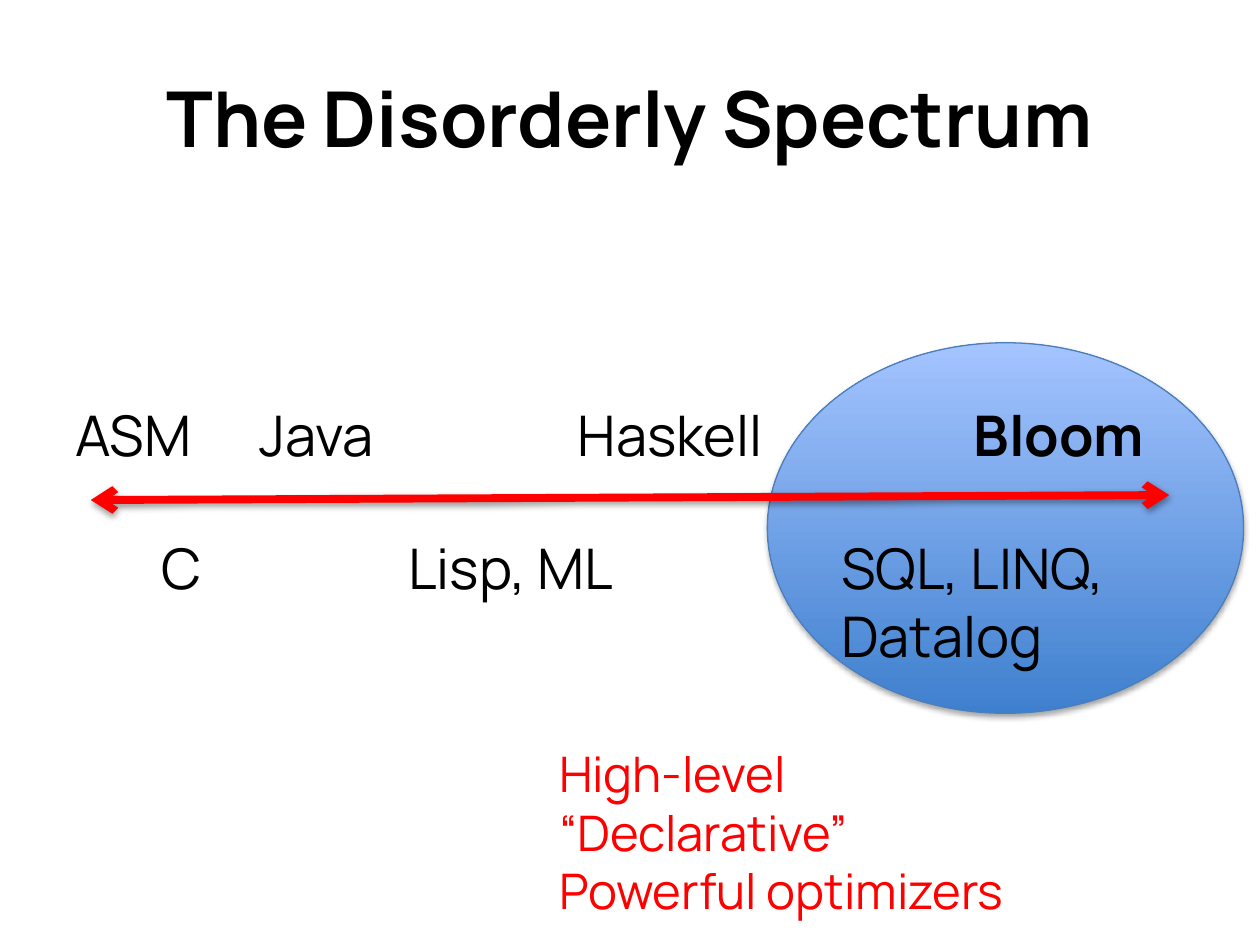
from lxml.etree import SubElement
from pptx import Presentation
from pptx.dml.color import RGBColor
from pptx.enum.shapes import MSO_CONNECTOR as Link, MSO_SHAPE as Form
from pptx.enum.text import MSO_ANCHOR as Anchor, MSO_AUTO_SIZE as Fit, PP_ALIGN as Align
from pptx.oxml.ns import qn
from pptx.util import Cm, Pt

BLACK = RGBColor(0x00, 0x00, 0x00)
RED = RGBColor(0xFF, 0x00, 0x00)
DEEP = RGBColor(0x3F, 0x80, 0xCE)
PALE = RGBColor(0xA4, 0xC4, 0xFF)
EDGE = RGBColor(0x4B, 0x7E, 0xBC)

ABOVE, BELOW = 7.95, 10.64
TALL, DOUBLE = 1.63, 3
LABELS = [
    ("ASM", 1.27, ABOVE, 2.97, TALL, False),
    ("C", 3, BELOW, 1.3, TALL, False),
    ("Java", 4.98, ABOVE, 2.87, TALL, False),
    ("Lisp, ML", 7.98, BELOW, 4.9, TALL, False),
    ("Haskell", 11.4, ABOVE, 4.42, TALL, False),
    ("SQL, LINQ,\vDatalog", 16.71, BELOW, 6.2, DOUBLE, False),
    ("Bloom", 19.38, ABOVE, 4.09, TALL, True),
]


class Board:
    font = "Manrope"

    def __init__(self, slide):
        self.slide = slide

    def shade(self, shape, alpha, dist):
        props = shape._element.spPr
        for old in props.findall(qn("a:effectLst")):
            props.remove(old)
        effects = SubElement(props, qn("a:effectLst"))
        shadow = SubElement(effects, qn("a:outerShdw"), blurRad=str(Pt(3.1)),
                            dist=str(Pt(dist)), dir="5400000", rotWithShape="0")
        color = SubElement(shadow, qn("a:srgbClr"), val=str(BLACK))
        SubElement(color, qn("a:alpha"), val=str(alpha * 1000))

    def oval(self, x, y, w, h):
        shape = self.slide.shapes.add_shape(Form.OVAL, Cm(x), Cm(y), Cm(w), Cm(h))
        shape.fill.gradient()
        shape.fill.gradient_angle = 90
        for stop, color in zip(shape.fill.gradient_stops, (DEEP, PALE)):
            stop.color.rgb = color
        shape.line.color.rgb = EDGE
        shape.line.width = Pt(0.75)
        self.shade(shape, 35, 1.8)

    def arrow(self, x1, y1, x2, y2):
        link = self.slide.shapes.add_connector(
            Link.STRAIGHT, Cm(x1), Cm(y1), Cm(x2), Cm(y2))
        link.line.color.rgb = RED
        link.line.width = Pt(4.5)
        for end in ("a:headEnd", "a:tailEnd"):
            SubElement(link.line._get_or_add_ln(), qn(end), type="arrow")
        self.shade(link, 38, 1.6)

    def text(self, words, x, y, w, h, size=32, color=BLACK, bold=False):
        frame = self.slide.shapes.add_textbox(Cm(x), Cm(y), Cm(w), Cm(h)).text_frame
        frame.word_wrap = False
        frame.auto_size = Fit.SHAPE_TO_FIT_TEXT
        frame.text = words
        for para in frame.paragraphs:
            para.font.name = self.font
            para.font.size = Pt(size)
            para.font.bold = bold
            para.font.color.rgb = color
        return frame

    def title(self, words, x, y, w, h):
        frame = self.text(words, x, y, w, h, size=44, bold=True)
        frame.word_wrap = True
        frame.auto_size = Fit.NONE
        frame.vertical_anchor = Anchor.MIDDLE
        frame.paragraphs[0].alignment = Align.CENTER


def main():
    deck = Presentation()
    deck.slide_width, deck.slide_height = Cm(25.4), Cm(19.05)
    board = Board(deck.slides.add_slide(deck.slide_layouts[6]))
    board.oval(15.47, 6.91, 9.6, 7.47)
    board.title("The Disorderly Spectrum", 1.27, 0.76, 22.86, 3.18)
    board.arrow(1.83, 10.08, 23.57, 9.98)
    for words, x, y, w, h, bold in LABELS:
        board.text(words, x, y, w, h, bold=bold)
    board.text("High-level\n“Declarative”\nPowerful optimizers",
               11.02, 14.86, 9.65, 3.84, size=28, color=RED)
    deck.save("out.pptx")


if __name__ == "__main__":
    main()
